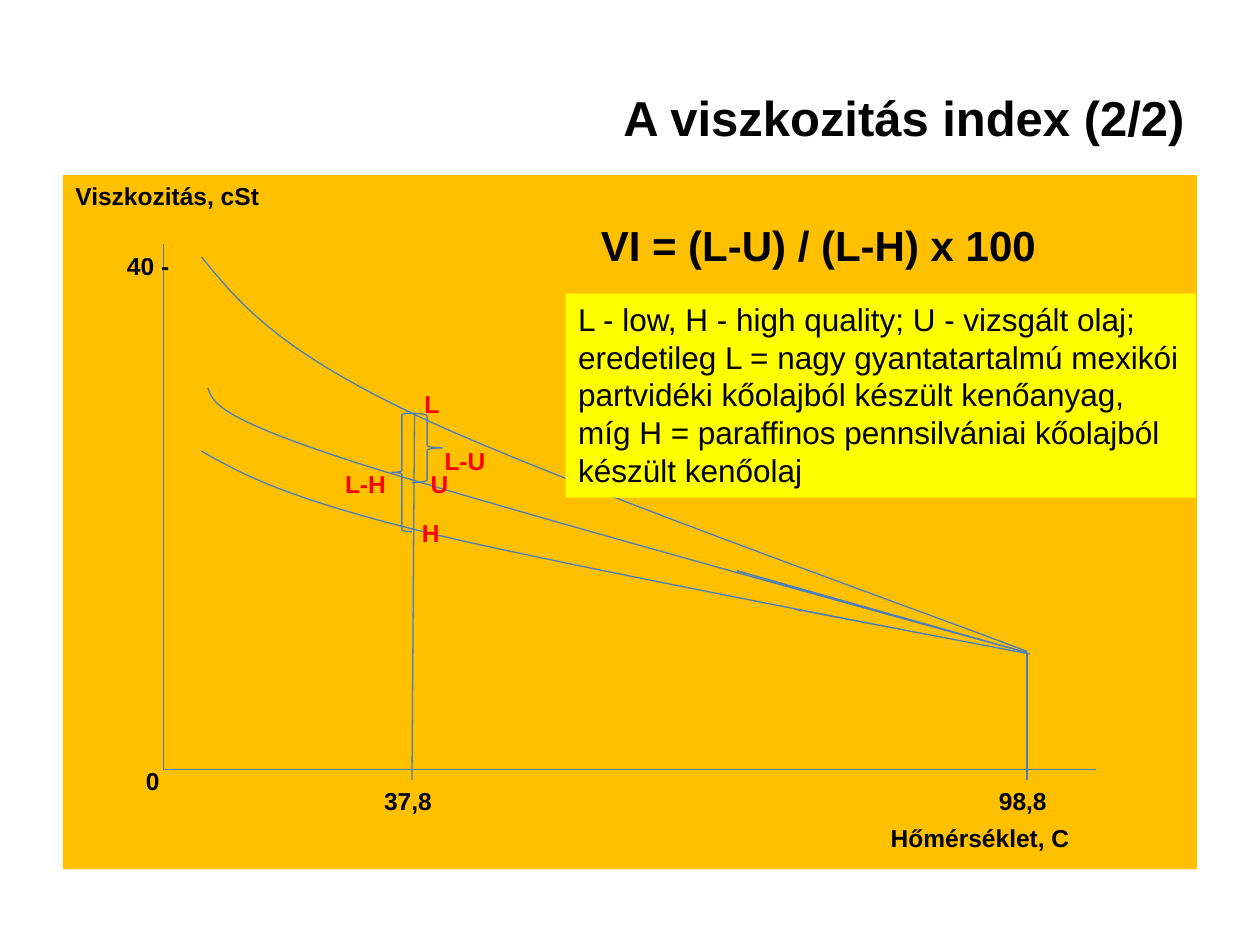
from lxml.etree import SubElement
from pptx import Presentation
from pptx.dml.color import RGBColor
from pptx.enum.shapes import MSO_CONNECTOR, MSO_SHAPE
from pptx.enum.text import MSO_ANCHOR, PP_ALIGN
from pptx.oxml.ns import qn
from pptx.util import Inches, Pt

COLORS = {"text": "000000", "label": "FF0000", "panel": "FFC000", "note": "FFFF00", "line": "4B7EBC"}

TITLE = "A viszkozitás index (2/2)"
Y_AXIS_TITLE = "Viszkozitás, cSt"
FORMULA = "VI = (L-U) / (L-H) x 100"
NOTE = (
    "L - low, H - high quality; U - vizsgált olaj; eredetileg L = nagy "
    "gyantatartalmú mexikói partvidéki kőolajból készült kenőanyag, míg "
    "H = paraffinos pennsilvániai kőolajból készült kenőolaj"
)

AXIS_X, AXIS_Y = 1.3, 6.11
TICK_END = 6.19

OIL_CURVES = {
    "L": [
        [(1.6, 2.04)],
        [(1.9, 2.41), (2.2, 2.77), (3.29, 3.29)],
        [(4.38, 3.81), (7.32, 4.85), (8.15, 5.17)],
    ],
    "H": [
        [(1.6, 3.58)],
        [(1.93, 3.77), (2.27, 3.95), (3.36, 4.22)],
        [(4.46, 4.49), (8.17, 5.19), (8.17, 5.19)],
        [(6.54, 4.88)],
        [(6.24, 4.82), (6.3, 4.83), (6.36, 4.85)],
    ],
    "U": [
        [(1.65, 3.08)],
        [(1.69, 3.2), (1.74, 3.32), (2.82, 3.67)],
        [(3.9, 4.02), (8.15, 5.18), (8.15, 5.18)],
        [(5.85, 4.53)],
    ],
}
GUIDES = [
    (AXIS_X, 1.94, AXIS_X, AXIS_Y),
    (AXIS_X, AXIS_Y, 8.7, AXIS_Y),
    (3.29, 3.29, 3.27, TICK_END),
    (8.15, 5.18, 8.15, TICK_END),
]
BRACES = [
    (MSO_SHAPE.LEFT_BRACE, 3.11, 3.28, 0.16, 0.94),
    (MSO_SHAPE.RIGHT_BRACE, 3.27, 3.28, 0.24, 0.55),
]
LABELS = [
    ("37,8", 2.95, 6.19, 0, "text"),
    ("98,8", 7.83, 6.19, 0, "text"),
    ("0", 1.06, 6.03, 0, "text"),
    ("Hőmérséklet, C", 6.97, 6.48, 0, "text"),
    ("L-H", 2.64, 3.67, 0, "label"),
    ("L-U", 3.43, 3.49, 0, "label"),
    ("H", 3.03, 4.06, 0.22, "label"),
    ("U", 3.27, 3.67, 0.05, "label"),
    ("L", 3.27, 3.04, 0, "label"),
    ("40 -", 0.91, 1.94, 0, "text"),
]


def color(name):
    return RGBColor.from_string(COLORS[name])


def write(paragraph, text, size, bold=True, color_name="text", indent=0):
    paragraph.text = text
    font = paragraph.font
    font.name, font.size, font.bold = "Arial", Pt(size), bold
    font.color.rgb = color(color_name)
    if indent:
        paragraph._p.get_or_add_pPr().set("marL", str(Inches(indent)))


def outline(part):
    part.line.color.rgb = color("line")
    part.line.width = Pt(0.75)


def add_block(slide, box, fill):
    block = slide.shapes.add_shape(MSO_SHAPE.RECTANGLE, *map(Inches, box))
    block.shadow.inherit = False
    block.fill.solid()
    block.fill.fore_color.rgb = color(fill)
    block.line.fill.background()
    frame = block.text_frame
    frame.word_wrap = True
    frame.vertical_anchor = MSO_ANCHOR.TOP
    frame.paragraphs[0].alignment = PP_ALIGN.LEFT
    return frame


def add_curve(slide, segments):
    start, *ends = [(Inches(x), Inches(y)) for x, y in (segment[-1] for segment in segments)]
    builder = slide.shapes.build_freeform(*start)
    builder.add_line_segments(ends, close=False)
    curve = builder.convert_to_shape()
    curve.shadow.inherit = False
    curve.fill.background()
    outline(curve)
    steps = list(curve._element.iter(qn("a:lnTo")))
    for step, segment in zip(steps, segments[1:]):
        if len(segment) == 3:
            step.clear()
            bend = SubElement(step.getparent(), qn("a:cubicBezTo"))
            step.getparent().replace(step, bend)
            for x, y in segment:
                SubElement(bend, qn("a:pt"), x=str(Inches(x) - curve.left), y=str(Inches(y) - curve.top))


def main():
    deck = Presentation()
    deck.slide_width, deck.slide_height = Inches(10), Inches(7.5)
    slide = deck.slides.add_slide(deck.slide_layouts[5])

    title = slide.shapes.title
    title.left, title.top, title.width, title.height = map(Inches, (0.5, 0.3, 9, 1.25))
    title.text_frame.vertical_anchor = MSO_ANCHOR.MIDDLE
    write(title.text_frame.paragraphs[0], TITLE, 28)
    title.text_frame.paragraphs[0].alignment = PP_ALIGN.RIGHT

    panel = add_block(slide, (0.5, 1.39, 9, 5.51), "panel")
    write(panel.paragraphs[0], Y_AXIS_TITLE, 14)
    formula = panel.add_paragraph()
    write(formula, FORMULA, 24, indent=4.17)
    formula.alignment = PP_ALIGN.LEFT
    formula.space_before = Pt(4.8)

    for segments in OIL_CURVES.values():
        add_curve(slide, segments)

    for ends in GUIDES:
        guide = slide.shapes.add_connector(MSO_CONNECTOR.STRAIGHT, *map(Inches, ends))
        outline(guide)
        SubElement(guide._element.spPr, qn("a:effectLst"))

    for kind, *box in BRACES:
        brace = slide.shapes.add_shape(kind, *map(Inches, box))
        brace.shadow.inherit = False
        brace.fill.background()
        outline(brace)

    for text, left, top, indent, color_name in LABELS:
        width = 1.73 if len(text) > 4 else 0.94
        label = slide.shapes.add_textbox(*map(Inches, (left, top, width, 0.34)))
        label.text_frame.word_wrap = True
        write(label.text_frame.paragraphs[0], text, 14, color_name=color_name, indent=indent)

    note = add_block(slide, (4.49, 2.33, 5, 1.62), "note")
    write(note.paragraphs[0], NOTE, 18, bold=False)

    deck.save("out.pptx")


if __name__ == "__main__":
    main()
